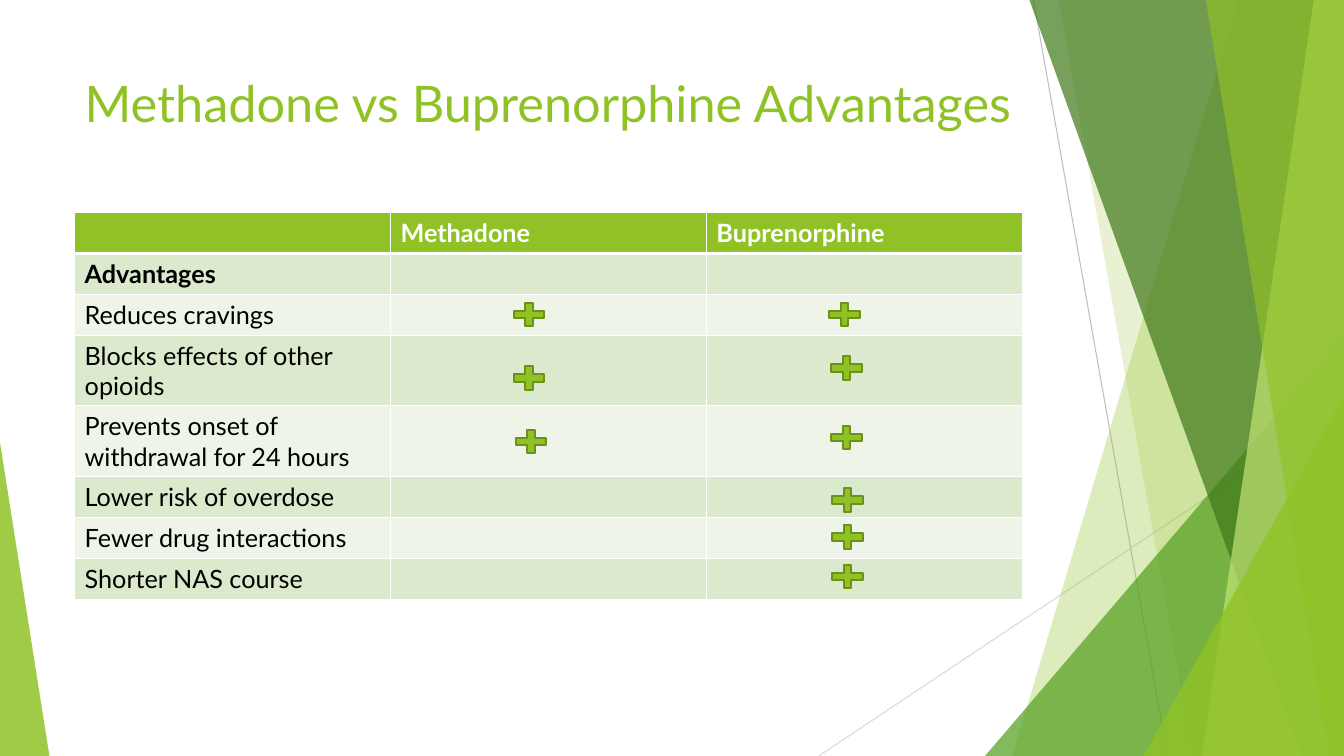
from lxml import etree
from pptx import Presentation
from pptx.dml.color import RGBColor
from pptx.enum.shapes import MSO_CONNECTOR, MSO_SHAPE
from pptx.enum.text import MSO_ANCHOR, PP_ALIGN
from pptx.oxml.ns import qn
from pptx.util import Inches, Pt

STRAIGHT = MSO_CONNECTOR.STRAIGHT
TRIANGLE = MSO_SHAPE.ISOSCELES_TRIANGLE
PLUS = MSO_SHAPE.MATH_PLUS
TOP = MSO_ANCHOR.TOP
LEFT = PP_ALIGN.LEFT

GREEN = RGBColor(0x90, 0xC2, 0x26)
MID_GREEN = RGBColor(0x54, 0xA0, 0x21)
DARK_GREEN = RGBColor(0x3F, 0x78, 0x19)
PALE_GREEN = RGBColor(0xC0, 0xE4, 0x74)
OUTLINE_GREEN = RGBColor(0x6B, 0x90, 0x1C)
BAND_DARK = RGBColor(0xDB, 0xE9, 0xCD)
BAND_LIGHT = RGBColor(0xEE, 0xF4, 0xE8)
GREY = RGBColor(0xBF, 0xBF, 0xBF)
LIGHT_GREY = RGBColor(0xD9, 0xD9, 0xD9)
WHITE = RGBColor(0xFF, 0xFF, 0xFF)
BLACK = RGBColor(0, 0, 0)

FONT = "Lato"
WIDTH, HEIGHT = 13.33, 7.5

# Content grid, in inches
CONTENT_LEFT, CONTENT_WIDTH = 0.74, 9.4
TITLE_TOP, TABLE_TOP = 0.67, 2.11
COLUMN_WIDTH = CONTENT_WIDTH / 3
LINE_ROW, TWO_LINE_ROW = 0.4, 0.7
PLUS_WIDTH, PLUS_HEIGHT = 0.41, 0.32

TITLE = "Methadone vs Buprenorphine Advantages"
HEADERS = ["", "Methadone", "Buprenorphine"]
# Label, row height
ADVANTAGES = [
    ("Advantages", LINE_ROW),
    ("Reduces cravings", LINE_ROW),
    ("Blocks effects of other opioids", TWO_LINE_ROW),
    ("Prevents onset of withdrawal for 24 hours", TWO_LINE_ROW),
    ("Lower risk of overdose", LINE_ROW),
    ("Fewer drug interactions", LINE_ROW),
    ("Shorter NAS course", LINE_ROW),
]
# Left and top of each plus mark
METHADONE_MARKS = [(5.04, 2.96), (5.04, 3.59), (5.06, 4.22)]
BUPRENORPHINE_MARKS = [(8.17, 2.96), (8.19, 3.49), (8.19, 4.18),
                       (8.2, 4.8), (8.2, 5.17), (8.2, 5.56)]


def write_text(frame, text, size=18, color=BLACK, bold=False):
    paragraph = frame.paragraphs[0]
    paragraph.alignment = LEFT
    run = paragraph.add_run()
    run.text = text
    run.font.name = FONT
    run.font.size = Pt(size)
    run.font.bold = bold
    run.font.color.rgb = color


def paint(shape, color, opacity=100, outline=None):
    shape.shadow.inherit = False
    shape.fill.solid()
    shape.fill.fore_color.rgb = color
    if opacity < 100:
        fill_color = shape.fill._xPr.find(".//" + qn("a:srgbClr"))
        etree.SubElement(fill_color, qn("a:alpha"), val=str(opacity * 1000))
    if outline is None:
        shape.line.fill.background()
    else:
        shape.line.color.rgb = outline
        shape.line.width = Pt(1.5)


def add_thin_line(slide, start, end, color):
    line = slide.shapes.add_connector(
        STRAIGHT, *(Inches(value) for value in (*start, *end)))
    line.line.color.rgb = color
    line.line.width = Pt(0.75)
    etree.SubElement(line._element.spPr, qn("a:effectLst"))


def add_right_panel(slide, top_left, bottom_left, color, opacity):
    """Full-height panel with a slanted left edge, flush with the right side."""
    corners = [(WIDTH, 0), (WIDTH, HEIGHT), (bottom_left, HEIGHT)]
    builder = slide.shapes.build_freeform(Inches(top_left), 0)
    builder.add_line_segments(
        [(Inches(x), Inches(y)) for x, y in corners], close=True)
    paint(builder.convert_to_shape(), color, opacity)


def add_corner_triangle(slide, left, width, height, apex, color, opacity):
    """Triangle standing on the bottom edge; apex is 0 for left, 1 for right."""
    triangle = slide.shapes.add_shape(
        TRIANGLE, Inches(left), Inches(HEIGHT - height),
        Inches(width), Inches(height))
    triangle.adjustments[0] = apex
    paint(triangle, color, opacity)


def add_decoration(slide):
    add_thin_line(slide, (10.25, 0), (11.58, HEIGHT), GREY)
    add_thin_line(slide, (WIDTH, 4.03), (8.12, HEIGHT), LIGHT_GREY)
    add_right_panel(slide, 12.28, 10.04, GREEN, 30)
    add_right_panel(slide, 10.5, 11.83, GREEN, 20)
    add_corner_triangle(slide, 9.77, 3.56, 4.17, 1, MID_GREEN, 72)
    add_right_panel(slide, 10.21, 12.91, DARK_GREEN, 70)
    add_right_panel(slide, 13.03, 11.92, PALE_GREEN, 70)
    add_right_panel(slide, 11.96, 13.18, GREEN, 65)
    add_corner_triangle(slide, 11.34, 1.99, 3.57, 1, GREEN, 80)
    add_corner_triangle(slide, 0, 0.49, 3.11, 0, GREEN, 85)


def add_title(slide):
    title = slide.shapes.title
    title.left, title.top = Inches(CONTENT_LEFT), Inches(TITLE_TOP)
    title.width, title.height = Inches(CONTENT_WIDTH), Inches(TABLE_TOP - TITLE_TOP)
    title.text_frame.vertical_anchor = TOP
    title.text_frame.word_wrap = True
    write_text(title.text_frame, TITLE, size=36, color=GREEN)


def format_cell(cell, fill, widths):
    """Set white borders (points, by side) and a solid fill."""
    properties = cell._tc.get_or_add_tcPr()
    for side, width in widths.items():
        border = etree.SubElement(properties, qn("a:ln" + side), w=str(Pt(width)))
        solid = etree.SubElement(border, qn("a:solidFill"))
        etree.SubElement(solid, qn("a:srgbClr"), val=str(WHITE))
    cell.fill.solid()
    cell.fill.fore_color.rgb = fill


def add_comparison_table(slide):
    heights = [LINE_ROW] + [height for _, height in ADVANTAGES]
    table = slide.shapes.add_table(
        len(heights), len(HEADERS), Inches(CONTENT_LEFT), Inches(TABLE_TOP),
        Inches(CONTENT_WIDTH), Inches(sum(heights))).table
    for column in table.columns:
        column.width = Inches(COLUMN_WIDTH)
    for index, height in enumerate(heights):
        row = table.rows[index]
        row.height = Inches(height)
        band = GREEN if index == 0 else BAND_DARK if index % 2 else BAND_LIGHT
        widths = {"L": 1, "R": 1, "T": 3 if index == 1 else 1,
                  "B": 3 if index == 0 else 1}
        for cell in row.cells:
            format_cell(cell, band, widths)
    for index, header in enumerate(HEADERS):
        if header:
            write_text(table.cell(0, index).text_frame, header,
                       color=WHITE, bold=True)
    for index, (label, _) in enumerate(ADVANTAGES, start=1):
        write_text(table.cell(index, 0).text_frame, label, bold=index == 1)


def add_plus_marks(slide):
    for left, top in METHADONE_MARKS + BUPRENORPHINE_MARKS:
        mark = slide.shapes.add_shape(
            PLUS, Inches(left), Inches(top),
            Inches(PLUS_WIDTH), Inches(PLUS_HEIGHT))
        paint(mark, GREEN, outline=OUTLINE_GREEN)


def main():
    presentation = Presentation()
    presentation.slide_width = Inches(WIDTH)
    presentation.slide_height = Inches(HEIGHT)
    title_only = presentation.slide_layouts[5]
    slide = presentation.slides.add_slide(title_only)
    add_decoration(slide)
    add_title(slide)
    add_comparison_table(slide)
    add_plus_marks(slide)
    presentation.save("out.pptx")


if __name__ == "__main__":
    main()
